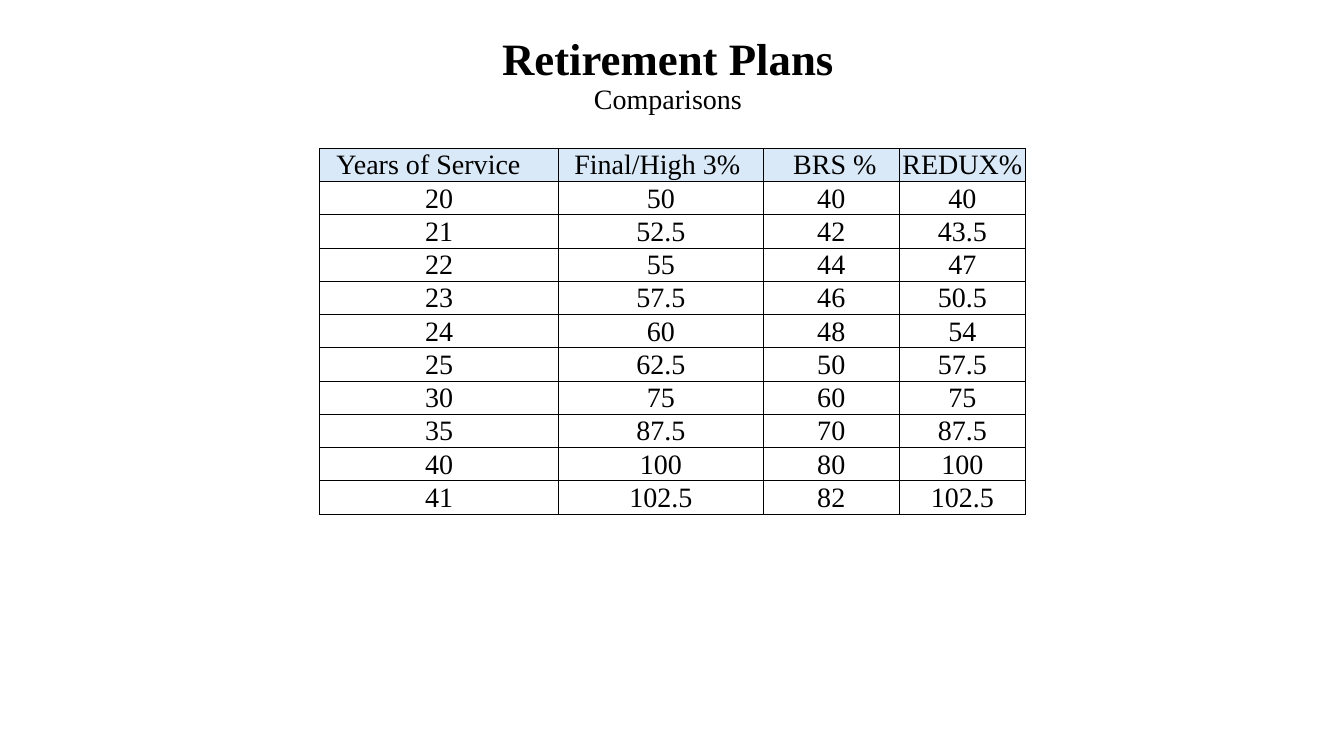
from lxml.etree import SubElement
from pptx import Presentation
from pptx.dml.color import RGBColor
from pptx.enum.text import MSO_ANCHOR as Anchor, PP_ALIGN as Align
from pptx.oxml.ns import qn
from pptx.util import Inches, Pt

TITLE = [
    ("Retirement Plans", {"size": Pt(32), "bold": True}),
    ("Comparisons", {"size": Pt(20), "bold": False}),
]
# heading, column width, extra left inset, extra right inset
COLUMNS = [
    ("Years of Service", 2.37, 0, 0.21),
    ("Final/High 3%", 2.03, 0, 0.07),
    ("BRS %", 1.35, 0.07, 0),
    ("REDUX%", 1.25, 0, 0),
]
RATES = [
    ("20", "50", "40", "40"),
    ("21", "52.5", "42", "43.5"),
    ("22", "55", "44", "47"),
    ("23", "57.5", "46", "50.5"),
    ("24", "60", "48", "54"),
    ("25", "62.5", "50", "57.5"),
    ("30", "75", "60", "75"),
    ("35", "87.5", "70", "87.5"),
    ("40", "100", "80", "100"),
    ("41", "102.5", "82", "102.5"),
]
FONT = "Times New Roman"
INK, HEADER_FILL = "000000", "DAE9F8"
ROW_HEIGHT = 0.33
INSET = 0.01


def color(hex_code):
    return RGBColor.from_string(hex_code)


def apply(target, values):
    for name, value in values.items():
        setattr(target, name, value)


def write(para, text, values):
    span = para.add_run()
    span.text = text
    apply(span.font, {"name": FONT, **values})
    span.font.color.rgb = color(INK)


def draw_borders(cell):
    properties = cell._tc.get_or_add_tcPr()
    for side in ("a:lnL", "a:lnR", "a:lnT", "a:lnB"):
        line = SubElement(properties, qn(side), w=str(Pt(0.5)))
        fill = SubElement(line, qn("a:solidFill"))
        SubElement(fill, qn("a:srgbClr"), val=INK)


def fill_cell(cell, text, left, right, header):
    apply(cell, {
        "vertical_anchor": Anchor.MIDDLE,
        "margin_left": Inches(INSET + left),
        "margin_right": Inches(INSET + right),
        "margin_top": Inches(INSET),
        "margin_bottom": 0,
    })
    draw_borders(cell)
    if header:
        cell.fill.solid()
        cell.fill.fore_color.rgb = color(HEADER_FILL)
    else:
        cell.fill.background()
    para = cell.text_frame.paragraphs[0]
    para.alignment = Align.CENTER
    write(para, text, {"size": Pt(20), "bold": False})


def add_rates(page):
    rows = [[column[0] for column in COLUMNS], *RATES]
    width = sum(column[1] for column in COLUMNS)
    table = page.shapes.add_table(
        len(rows), len(COLUMNS), Inches(3.17), Inches(1.47),
        Inches(width), Inches(ROW_HEIGHT * len(rows))).table
    apply(table, {"first_row": False, "horz_banding": False})
    for column, (_, column_width, _, _) in zip(table.columns, COLUMNS):
        column.width = Inches(column_width)
    for row_index, values in enumerate(rows):
        header = row_index == 0
        table.rows[row_index].height = Inches(ROW_HEIGHT)
        for column_index, text in enumerate(values):
            left, right = COLUMNS[column_index][2:] if header else (0, 0)
            fill_cell(table.cell(row_index, column_index), text, left, right, header)


def add_title(page):
    box = page.shapes.add_textbox(0, Inches(0.01), Inches(13.25), Inches(1.5))
    apply(box.text_frame, {"word_wrap": True, "vertical_anchor": Anchor.MIDDLE})
    para = box.text_frame.paragraphs[0]
    apply(para, {"alignment": Align.CENTER, "line_spacing": 0.9})
    for index, (text, values) in enumerate(TITLE):
        if index:
            para.add_line_break()
        write(para, text, values)


def main():
    deck = Presentation()
    apply(deck, {"slide_width": Inches(13.33), "slide_height": Inches(7.5)})
    page = deck.slides.add_slide(deck.slide_layouts[6])
    add_rates(page)
    add_title(page)
    deck.save("out.pptx")


if __name__ == "__main__":
    main()
